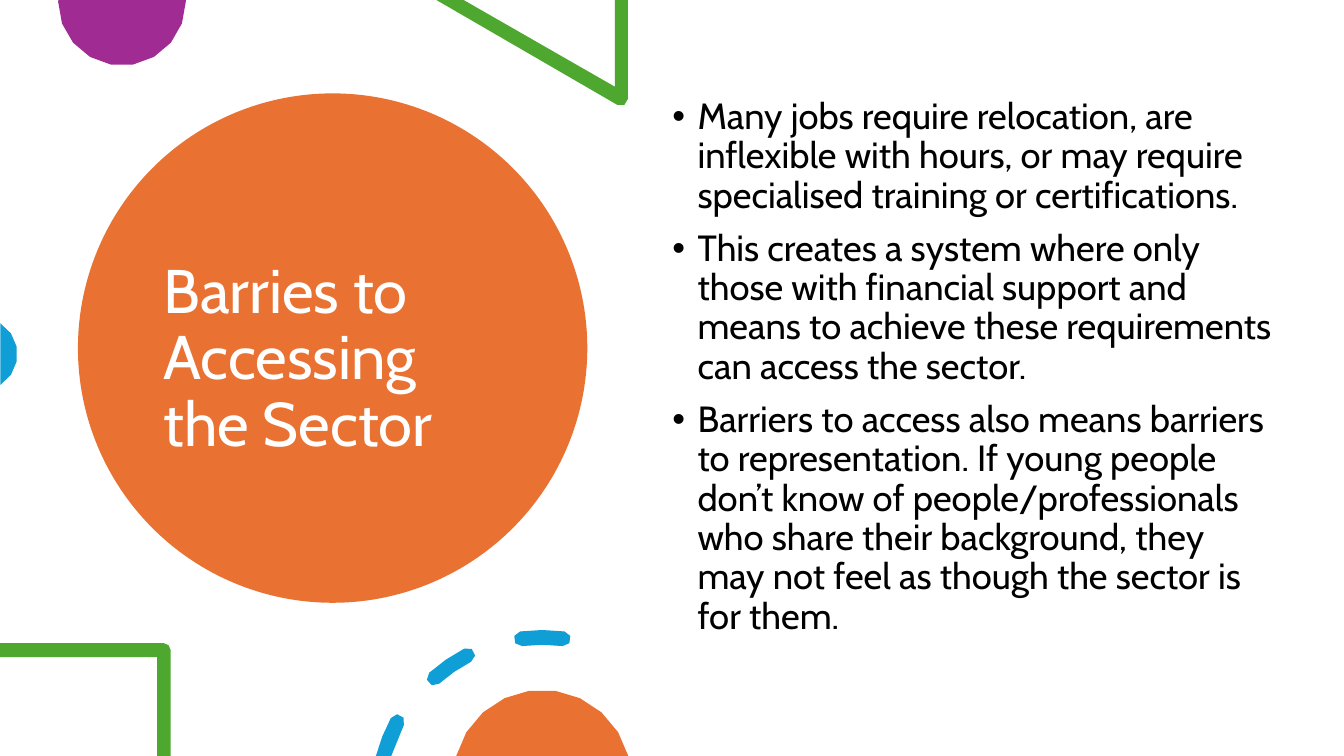
import math

import lxml.etree
import pptx
import pptx.dml.color
import pptx.enum.shapes
import pptx.enum.text
import pptx.oxml.ns
import pptx.util

COLUMNS, ROWS, CELL = 40, 22.5, 304800
FLATNESS = 0.03
ORANGE, PURPLE, GREEN, BLUE = "E97132", "A02B93", "4EA72E", "0F9ED5"
TITLE = "Barries to Accessing the Sector"
BARRIERS = [
    "Many jobs require relocation, are inflexible with hours, or may require "
    "specialised training or certifications.",
    "This creates a system where only those with financial support and means "
    "to achieve these requirements can access the sector.",
    "Barriers to access also means barriers to representation. If young people "
    "don’t know of people/professionals who share their background, they may "
    "not feel as though the sector is for them.",
]


def cells(count):
    return pptx.util.Emu(round(count * CELL))


def paint(colour_format, hex_colour):
    colour_format.rgb = pptx.dml.color.RGBColor.from_string(hex_colour)


def write(paragraph, words, *, font, size, colour, before=0, bullet=None, indent=0):
    run = paragraph.add_run()
    run.text = words
    run.font.name = font
    run.font.size = pptx.util.Pt(size)
    paint(run.font.color, colour)
    paragraph.alignment = pptx.enum.text.PP_ALIGN.LEFT
    paragraph.line_spacing = 0.9
    paragraph.space_before = pptx.util.Pt(before)
    if bullet:
        properties = paragraph._p.get_or_add_pPr()
        properties.set("marL", str(cells(indent)))
        properties.set("indent", str(-cells(indent)))
        for tag, attribute, value in (("a:buFont", "typeface", "Arial"),
                                      ("a:buChar", "char", bullet)):
            mark = lxml.etree.SubElement(properties, pptx.oxml.ns.qn(tag))
            mark.set(attribute, value)


def polar(centre, radius, degrees):
    angle = math.radians(degrees)
    return centre[0] + radius * math.cos(angle), centre[1] + radius * math.sin(angle)


def arc(centre, radius, start, end):
    widest = math.degrees(2 * math.acos(1 - FLATNESS / radius))
    steps = math.ceil(abs(end - start) / widest)
    return [polar(centre, radius, start + (end - start) * i / steps)
            for i in range(steps + 1)]


def dash(centre, radius, half, start, end, inner_start=None):
    def cap(angle, turn):
        return arc(polar(centre, radius, angle), half, turn, turn + 180)[1:-1]

    outline = arc(centre, radius + half, start, end) + cap(end, end)
    if inner_start is None:
        return outline + arc(centre, radius - half, end, start) + cap(start, start + 180)
    return outline + arc(centre, radius - half, end, inner_start)


class BubbleSlide:
    """Holds the font and the current slide, and adds elements on a grid of cells."""

    def __init__(self, deck, font):
        self.font = font
        self.slide = deck.slides.add_slide(deck.slide_layouts[1])

    def finish(self, shape, colour):
        shape.fill.solid()
        paint(shape.fill.fore_color, colour)
        shape.line.fill.background()
        shape.shadow.inherit = False

    def circle(self, left, top, diameter, colour):
        bubble = self.slide.shapes.add_shape(
            pptx.enum.shapes.MSO_SHAPE.OVAL, *map(cells, (left, top, diameter, diameter)))
        self.finish(bubble, colour)

    def outline(self, colour, *contours):
        builder = None
        for contour in contours:
            points = [(cells(x), cells(y)) for x, y in contour]
            if builder is None:
                builder = self.slide.shapes.build_freeform(*points[0])
            else:
                builder.move_to(*points[0])
            builder.add_line_segments(points[1:], close=True)
        self.finish(builder.convert_to_shape(), colour)

    def words(self, index, box, paragraphs, anchor, **style):
        holder = self.slide.placeholders[index]
        holder.element.getparent().append(holder.element)
        holder.left, holder.top, holder.width, holder.height = map(cells, box)
        frame = holder.text_frame
        frame.word_wrap = True
        frame.auto_size = pptx.enum.text.MSO_AUTO_SIZE.NONE
        frame.vertical_anchor = anchor
        for number, words in enumerate(paragraphs):
            paragraph = frame.add_paragraph() if number else frame.paragraphs[0]
            write(paragraph, words, font=self.font, **style)


def main():
    deck = pptx.Presentation()
    deck.slide_width, deck.slide_height = cells(COLUMNS), cells(ROWS)
    page = BubbleSlide(deck, "Cabin")
    anchors = pptx.enum.text.MSO_ANCHOR

    page.circle(2.32, 2.78, 15.16, ORANGE)
    page.words(0, (4.56, 4.04, 10.62, 13.35), [TITLE], anchors.MIDDLE,
               size=44, colour="FFFFFF")

    page.outline(PURPLE, [(1.74, 0), *arc((3.63, 0.05), 1.9, 180, 0), (5.53, 0)])
    page.outline(GREEN, [(18.69, 0), (18.3, 0), (18.3, 2.58), (13.8, 0), (12.99, 0),
                         *arc((18.48, 2.94), 0.21, 120, 0)])
    page.outline(BLUE, arc((-0.56, 10.54), 1.08, -58, 58))

    page.words(1, (19.71, 2.77, 18.54, 17.34), BARRIERS, anchors.TOP,
               size=26, colour="000000", before=10, bullet="•", indent=0.75)

    page.outline(GREEN, [(0, 19.14), *arc((4.87, 19.35), 0.21, 270, 360), (5.08, ROWS),
                         (4.68, ROWS), (4.68, 19.56), (0, 19.56)])
    hub, half = (16.14, 23.8), 0.22
    page.outline(BLUE, dash(hub, 4.9, half, 194.7, 208.3, inner_start=196.1),
                 dash(hub, 4.84, half, 228.3, 242.7),
                 dash(hub, 4.83, half, 262.5, 277.5))
    page.outline(ORANGE, arc((16.14, 23.18), 2.65, 194.9, 345.1))

    deck.save("out.pptx")


if __name__ == "__main__":
    main()
